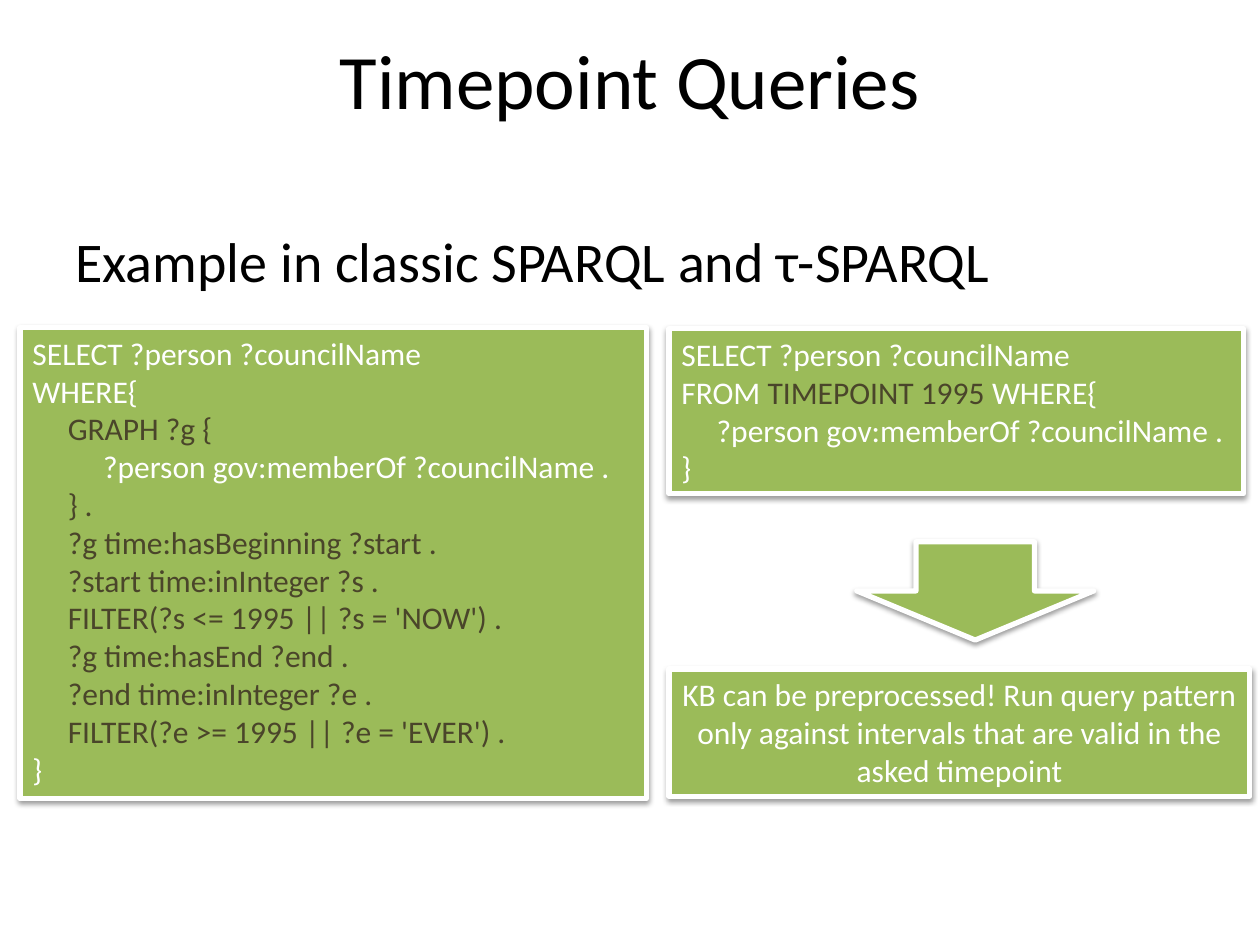
from lxml.etree import SubElement
from pptx import Presentation
from pptx.dml.color import RGBColor
from pptx.enum.shapes import MSO_SHAPE
from pptx.enum.text import MSO_ANCHOR, PP_ALIGN
from pptx.oxml.ns import qn
from pptx.util import Inches, Pt

BLACK = RGBColor(0x00, 0x00, 0x00)
WHITE = RGBColor(0xFF, 0xFF, 0xFF)
GREEN = RGBColor(0x9B, 0xBB, 0x59)
BROWN = RGBColor(0x4A, 0x45, 0x2A)
FONT = "Calibri"
STEP = 0.28

CLASSIC = [
    (0, [("SELECT ?person ?councilName", WHITE)]),
    (0, [("WHERE{", WHITE)]),
    (1, [("GRAPH ?g {", BROWN)]),
    (2, [("?person gov:memberOf ?councilName .", WHITE)]),
    (1, [("} .", BROWN)]),
    (1, [("?g time:hasBeginning ?start .", BROWN)]),
    (1, [("?start time:inInteger ?s .", BROWN)]),
    (1, [("FILTER(?s <= 1995 || ?s = 'NOW') .", BROWN)]),
    (1, [("?g time:hasEnd ?end .", BROWN)]),
    (1, [("?end time:inInteger ?e .", BROWN)]),
    (1, [("FILTER(?e >= 1995 || ?e = 'EVER') .", BROWN)]),
    (0, [("}", WHITE)]),
]
TAU = [
    (0, [("SELECT ?person ?councilName", WHITE)]),
    (0, [("FROM ", WHITE), ("TIMEPOINT 1995 ", BROWN), ("WHERE{", WHITE)]),
    (1, [("?person gov:memberOf ?councilName .", WHITE)]),
    (0, [("}", WHITE)]),
]
NOTE = ("KB can be preprocessed! Run query pattern only against "
        "intervals that are valid in the asked timepoint")


def style(run, size, color):
    run.font.name = FONT
    run.font.size = Pt(size)
    run.font.color.rgb = color


def add_text(slide, box, text, size, anchor, align):
    frame = slide.shapes.add_textbox(*map(Inches, box)).text_frame
    frame.word_wrap = True
    frame.vertical_anchor = anchor
    frame.text = text
    para = frame.paragraphs[0]
    para.alignment = align
    style(para.runs[0], size, BLACK)


def add_panel(slide, kind, box):
    shape = slide.shapes.add_shape(kind, *map(Inches, box))
    shape.fill.solid()
    shape.fill.fore_color.rgb = GREEN
    shape.line.color.rgb = WHITE
    shape.line.width = Pt(3)
    shape.shadow.inherit = False
    effects = shape.element.spPr.find(qn("a:effectLst"))
    shade = SubElement(effects, qn("a:outerShdw"), blurRad=str(Pt(3.1)),
                       dist=str(Pt(1.6)), dir="5400000", rotWithShape="0")
    color = SubElement(shade, qn("a:srgbClr"), val="000000")
    SubElement(color, qn("a:alpha"), val="38000")
    return shape


def add_code(slide, box, lines, align=PP_ALIGN.LEFT):
    frame = add_panel(slide, MSO_SHAPE.RECTANGLE, box).text_frame
    frame.word_wrap = True
    frame.vertical_anchor = MSO_ANCHOR.TOP
    for index, (level, parts) in enumerate(lines):
        para = frame.add_paragraph() if index else frame.paragraphs[0]
        para.alignment = align
        para._p.get_or_add_pPr().set("marL", str(Inches(STEP * level)))
        for text, color in parts:
            run = para.add_run()
            run.text = text
            style(run, 18, color)


def main():
    deck = Presentation()
    deck.slide_width, deck.slide_height = Inches(10), Inches(7.5)
    slide = deck.slides.add_slide(deck.slide_layouts[6])
    add_text(slide, (0.5, 0, 9, 1.25), "Timepoint Queries", 44,
             MSO_ANCHOR.MIDDLE, PP_ALIGN.CENTER)
    add_text(slide, (0.5, 1.75, 9, 4.95),
             "Example in classic SPARQL and τ-SPARQL", 32,
             MSO_ANCHOR.TOP, PP_ALIGN.LEFT)
    add_code(slide, (0.16, 2.6, 4.97, 3.74), CLASSIC)
    add_code(slide, (5.31, 2.61, 4.56, 1.31), TAU)
    add_panel(slide, MSO_SHAPE.DOWN_ARROW, (6.8, 4.3, 1.88, 0.78))
    add_code(slide, (5.31, 5.31, 4.61, 1.01), [(0, [(NOTE, WHITE)])],
             PP_ALIGN.CENTER)
    deck.save("out.pptx")


if __name__ == "__main__":
    main()
